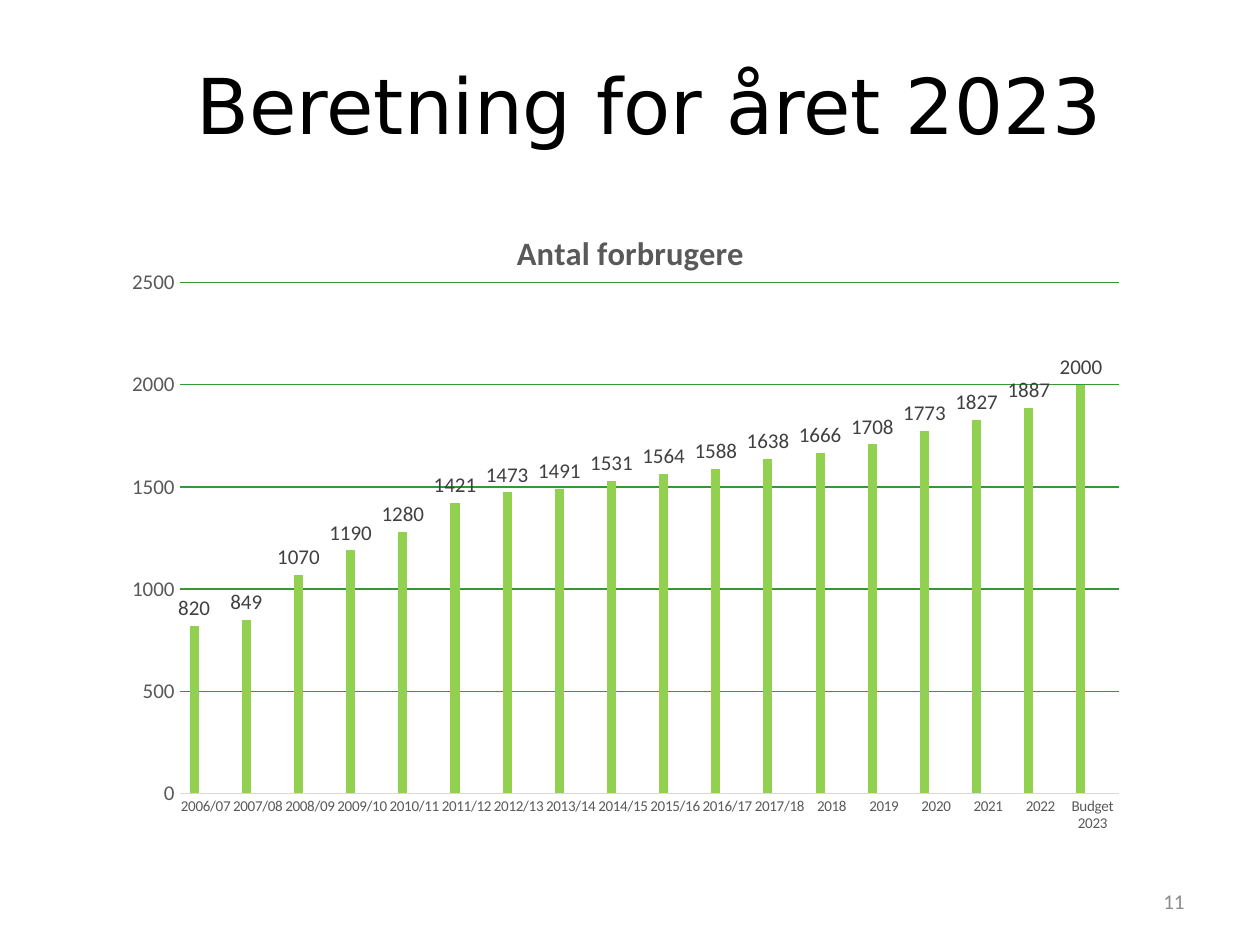
from dataclasses import dataclass

from lxml import etree
from pptx import Presentation
from pptx.chart.data import CategoryChartData
from pptx.dml.color import RGBColor
from pptx.enum.chart import XL_CHART_TYPE, XL_LABEL_POSITION, XL_TICK_MARK
from pptx.enum.text import MSO_ANCHOR, PP_ALIGN
from pptx.oxml.ns import qn
from pptx.util import Pt

COLUMNS = XL_CHART_TYPE.COLUMN_CLUSTERED
OUTSIDE_END = XL_LABEL_POSITION.OUTSIDE_END
NO_TICKS = XL_TICK_MARK.NONE
MIDDLE = MSO_ANCHOR.MIDDLE
CENTER, RIGHT = PP_ALIGN.CENTER, PP_ALIGN.RIGHT


@dataclass(frozen=True)
class Theme:
    heading_font: str = "DejaVu Sans"
    body_font: str = "Calibri"
    black: str = "000000"
    axis_text: str = "595959"
    label_text: str = "404040"
    page_text: str = "8C8C8C"
    axis_line: str = "D9D9D9"
    grid: str = "339933"
    series: tuple = ("92D050", "9BBB59", "8064A2")
    heading_size: float = 44
    chart_title_size: float = 18.6
    label_size: float = 12
    category_size: float = 8.6
    chart_size: float = 10
    hairline: float = 0.75


THEME = Theme()

YEARS = [f"{year}/{year + 1 - 2000:02d}" for year in range(2006, 2018)]
YEARS += [str(year) for year in range(2018, 2023)] + ["Budget 2023"]
CONSUMERS = [820, 849, 1070, 1190, 1280, 1421, 1473, 1491, 1531,
             1564, 1588, 1638, 1666, 1708, 1773, 1827, 1887, 2000]
PLOT_AREA = {"x": 0.063, "y": 0.123, "w": 0.91, "h": 0.814}


def style_font(font, size, color, name=THEME.body_font, bold=False):
    values = {"size": Pt(size), "name": name, "bold": bold}
    for attribute, value in values.items():
        setattr(font, attribute, value)
    font.color.rgb = RGBColor.from_string(color)


def style_line(line, color):
    line.color.rgb = RGBColor.from_string(color)
    line.width = Pt(THEME.hairline)


def write_line(shape, text, align, **font_values):
    frame = shape.text_frame
    frame.word_wrap = True
    frame.vertical_anchor = MIDDLE
    frame.text = text
    paragraph = frame.paragraphs[0]
    paragraph.alignment = align
    style_font(paragraph.runs[0].font, **font_values)


def add_heading(slide):
    heading = slide.shapes.title
    box = {"left": 76.3, "top": 26, "width": 589.7, "height": 67}
    for attribute, value in box.items():
        setattr(heading, attribute, Pt(value))
    write_line(heading, "Beretning for året 2023", CENTER,
               size=THEME.heading_size, color=THEME.black,
               name=THEME.heading_font)


def add_page_number(slide):
    page = slide.shapes.add_textbox(Pt(516), Pt(500.5), Pt(168), Pt(28.75))
    write_line(page, "11", RIGHT, size=THEME.label_size, color=THEME.page_text)


def fix_plot_area(chart):
    """Pin the inner plot area to fixed fractions of the chart."""
    plot_area = chart.plots[0]._element.getparent()
    for old in plot_area.findall(qn("c:layout")):
        plot_area.remove(old)
    layout = etree.Element(qn("c:layout"))
    manual = etree.SubElement(layout, qn("c:manualLayout"))
    settings = {"layoutTarget": "inner", "xMode": "edge", "yMode": "edge"}
    for tag, value in {**settings, **PLOT_AREA}.items():
        etree.SubElement(manual, qn(f"c:{tag}")).set("val", str(value))
    plot_area.insert(0, layout)


def style_axes(chart):
    years, counts = chart.category_axis, chart.value_axis
    for axis, size in ((years, THEME.category_size), (counts, THEME.label_size)):
        axis.major_tick_mark = axis.minor_tick_mark = NO_TICKS
        style_font(axis.tick_labels.font, size, THEME.axis_text)
    style_line(years.format.line, THEME.axis_line)
    counts.format.line.fill.background()
    counts.minimum_scale, counts.maximum_scale = 0, 2500
    counts.major_unit = 500
    counts.has_major_gridlines = True
    style_line(counts.major_gridlines.format.line, THEME.grid)


def style_series(series, color):
    series.format.fill.solid()
    series.format.fill.fore_color.rgb = RGBColor.from_string(color)
    labels = series.data_labels
    labels.show_value = True
    labels.position = OUTSIDE_END
    style_font(labels.font, THEME.label_size, THEME.label_text)


def add_consumer_chart(slide):
    data = CategoryChartData()
    data.categories = YEARS
    empty = [None] * len(YEARS)
    for number, values in enumerate((CONSUMERS, empty, empty), start=1):
        data.add_series(f"Series {number}", values)
    chart = slide.shapes.add_chart(
        COLUMNS, Pt(65.5), Pt(117.4), Pt(589.7), Pt(358.6), data).chart
    style_font(chart.font, THEME.chart_size, THEME.black)
    chart.has_legend = False
    chart.has_title = True
    title = chart.chart_title
    title.include_in_layout = False
    title.text_frame.text = "Antal forbrugere"
    style_font(title.text_frame.paragraphs[0].runs[0].font,
               THEME.chart_title_size, THEME.axis_text, bold=True)
    columns = chart.plots[0]
    columns.gap_width, columns.overlap = 219, -27
    columns.vary_by_categories = False
    for series, color in zip(columns.series, THEME.series):
        style_series(series, color)
    style_axes(chart)
    fix_plot_area(chart)


def main():
    deck = Presentation()
    deck.slide_width, deck.slide_height = Pt(720), Pt(540)
    slide = deck.slides.add_slide(deck.slide_layouts.get_by_name("Title Only"))
    add_heading(slide)
    add_page_number(slide)
    add_consumer_chart(slide)
    deck.save("out.pptx")


if __name__ == "__main__":
    main()
